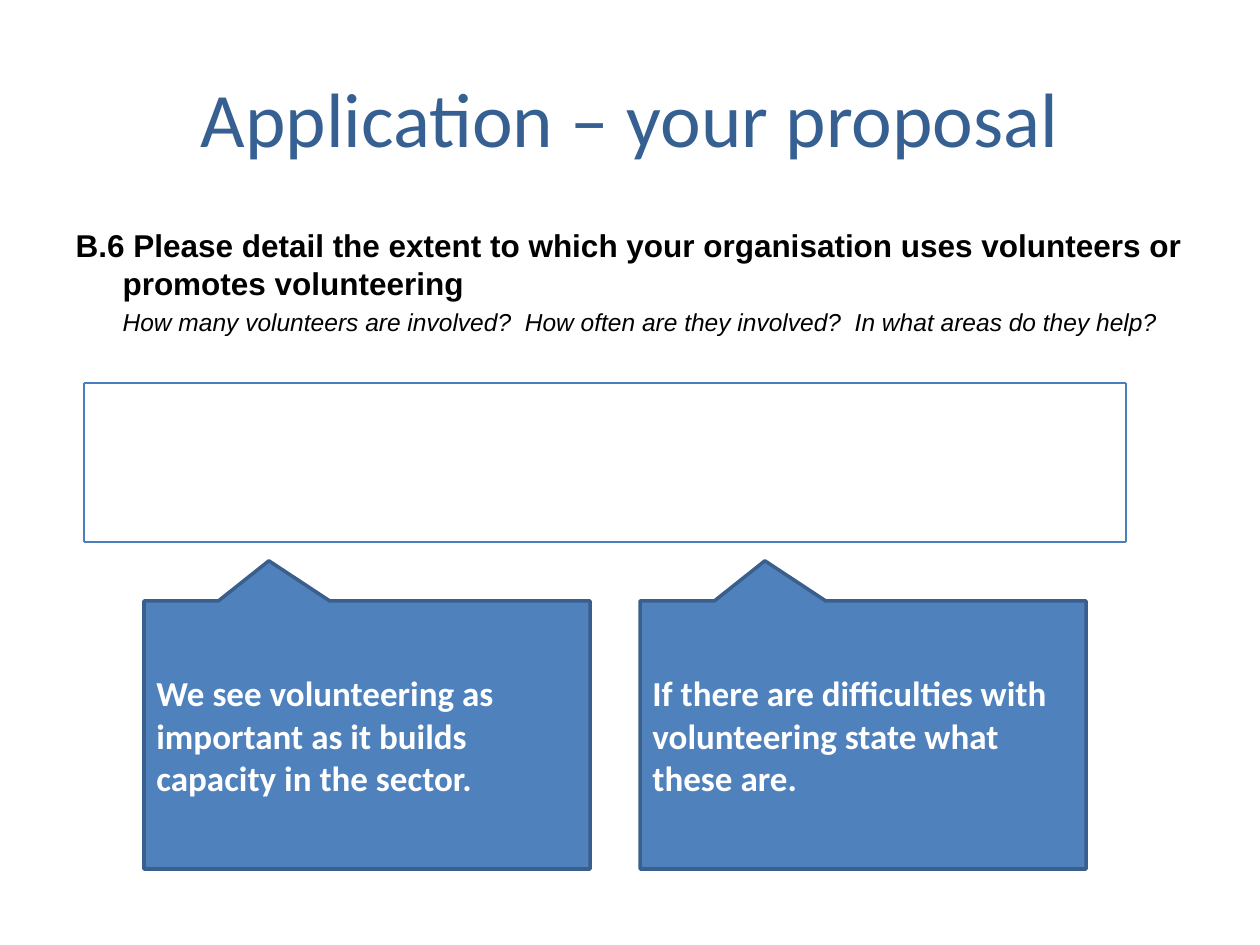
"""Build the slide about volunteers in the application form."""
from dataclasses import dataclass

from lxml import etree
from pptx import Presentation
from pptx.dml.color import RGBColor
from pptx.enum import shapes, text
from pptx.oxml import ns
from pptx.util import Emu, Pt


@dataclass(frozen=True)
class Theme:
    title: str = "376092"
    ink: str = "000000"
    fill: str = "4F81BD"
    edge: str = "3A5F8C"
    rule: str = "4B7EBC"
    white: str = "FFFFFF"
    head: int = 44
    note: int = 20
    ask: int = 18
    hint: int = 14


theme = Theme()


def px(n):
    return Emu(round(n * 914400 / 126))


def add_run(para, words, font, size, color, bold=False, italic=False):
    run = para.add_run()
    run.text = words
    run.font.name = font
    run.font.size = Pt(size)
    run.font.bold = bold
    run.font.italic = italic
    run.font.color.rgb = RGBColor.from_string(color)


deck = Presentation()
deck.slide_width, deck.slide_height = px(1260), px(945)
slide = deck.slides.add_slide(deck.slide_layouts[1])
title, body = slide.placeholders

title.left, title.top, title.width, title.height = px(63), px(38), px(1134), px(158)
para = title.text_frame.paragraphs[0]
para.alignment = text.PP_ALIGN.CENTER
add_run(para, "Application – your proposal", "Calibri", theme.head, theme.title)

body.left, body.top, body.width, body.height = px(63), px(220), px(1134), px(624)
frame = body.text_frame
asks = [
    ("B.6 Please detail the extent to which your organisation uses volunteers "
     "or promotes volunteering", theme.ask, True, -47),
    ("How many volunteers are involved?  How often are they involved?  "
     "In what areas do they help?", theme.hint, False, 0),
]
for i, (words, size, bold, indent) in enumerate(asks):
    para = frame.add_paragraph() if i else frame.paragraphs[0]
    props = para._p.get_or_add_pPr()
    props.set("marL", str(px(47)))
    props.set("indent", str(px(indent)))
    etree.SubElement(props, ns.qn("a:buNone"))
    add_run(para, words, "Arial", size, theme.ink, bold, not bold)

left, top, right, base = 84, 383, 1126, 542
sides = [
    (left, top, right, top),
    (left, top, left, base),
    (right, top, right, base),
    (left, base, right, base),
]
for side in sides:
    line = slide.shapes.add_connector(
        shapes.MSO_CONNECTOR.STRAIGHT, *[px(n) for n in side])
    line.line.color.rgb = RGBColor.from_string(theme.rule)
    line.line.width = Pt(0.75)
    etree.SubElement(line._element.spPr, ns.qn("a:effectLst"))

notes = [
    "We see volunteering as important as it builds capacity in the sector.",
    "If there are difficulties with volunteering state what these are.",
]
for i, words in enumerate(notes):
    note = slide.shapes.add_shape(
        shapes.MSO_SHAPE.RECTANGULAR_CALLOUT,
        px(144 + 496 * i), px(601), px(446), px(268))
    note.adjustments[0], note.adjustments[1] = -0.22, -0.65
    note.shadow.inherit = False
    note.fill.solid()
    note.fill.fore_color.rgb = RGBColor.from_string(theme.fill)
    note.line.color.rgb = RGBColor.from_string(theme.edge)
    note.line.width = Pt(2)
    frame = note.text_frame
    frame.word_wrap = True
    frame.vertical_anchor = text.MSO_ANCHOR.MIDDLE
    para = frame.paragraphs[0]
    para.alignment = text.PP_ALIGN.LEFT
    add_run(para, words, "Calibri", theme.note, theme.white, True)

deck.save("out.pptx")
